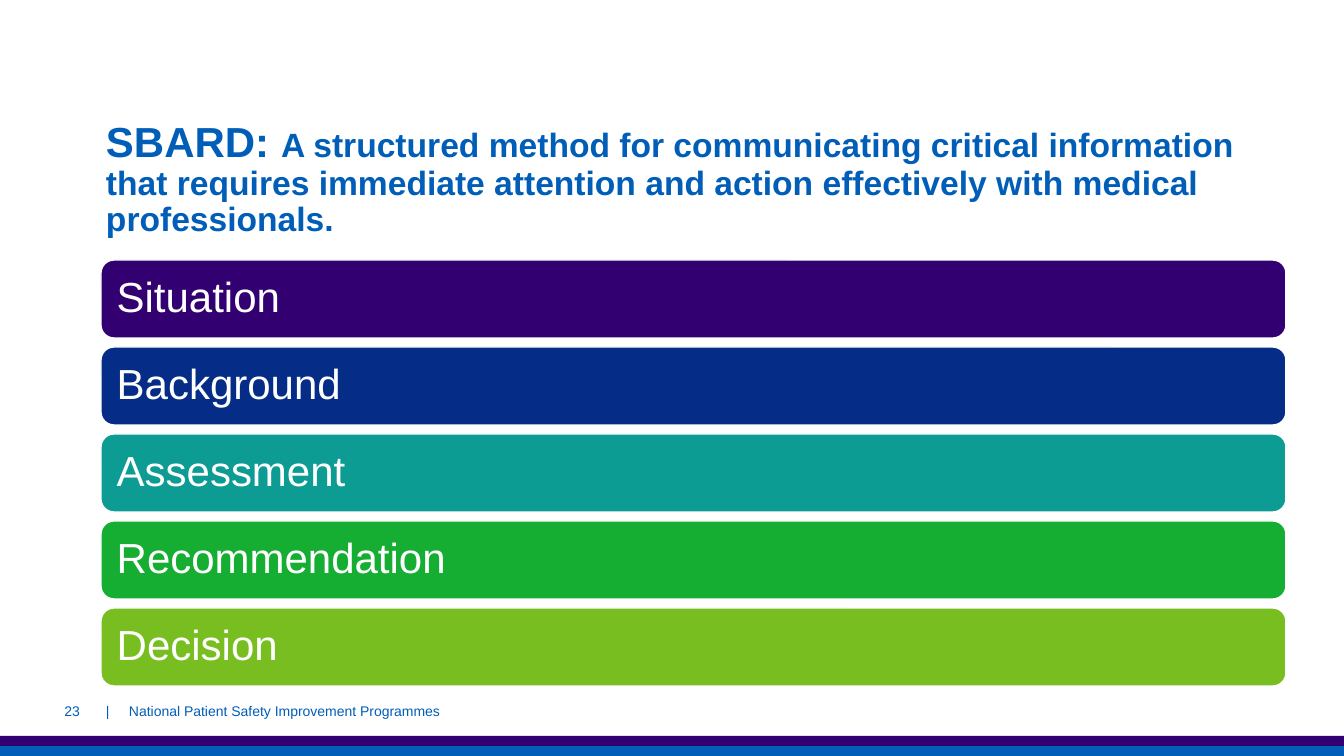
from lxml import etree
from pptx import Presentation
from pptx.dml.color import RGBColor
from pptx.enum.shapes import MSO_SHAPE as SHAPE
from pptx.enum.text import MSO_ANCHOR as ANCHOR, MSO_AUTO_SIZE as AUTO, PP_ALIGN as ALIGN
from pptx.oxml.ns import qn
from pptx.util import Pt

PX = 12192000 / 1344
WIDTH, HEIGHT = 1344, 756
FONT = "Arial"
BLUE = RGBColor(0x00, 0x5E, 0xB8)
PURPLE = RGBColor(0x33, 0x00, 0x72)
NAVY = RGBColor(0x05, 0x2D, 0x88)
TEAL = RGBColor(0x0C, 0x9C, 0x94)
GREEN = RGBColor(0x15, 0xAE, 0x33)
LIME = RGBColor(0x78, 0xBE, 0x20)
WHITE = RGBColor(0xFF, 0xFF, 0xFF)

STEPS = [
    ("Situation", PURPLE),
    ("Background", NAVY),
    ("Assessment", TEAL),
    ("Recommendation", GREEN),
    ("Decision", LIME),
]


def px(n):
    """Turn pixels into EMU."""
    return round(n * PX)


def set_frame(tf, anchor, side, edge):
    """Set wrapping, anchor and the side and top/bottom insets of a text frame."""
    tf.word_wrap = True
    tf.auto_size = AUTO.NONE
    tf.vertical_anchor = anchor
    tf.margin_left = tf.margin_right = px(side)
    tf.margin_top = tf.margin_bottom = px(edge)


def add_run(p, text, size, color, bold=False):
    """Add one formatted run to a paragraph."""
    r = p.add_run()
    r.text = text
    r.font.name = FONT
    r.font.size = Pt(size)
    r.font.bold = bold
    r.font.color.rgb = color


def add_block(slide, kind, box, fill):
    """Add a flat filled shape without an outline."""
    sp = slide.shapes.add_shape(kind, *map(px, box))
    sp.shadow.inherit = False
    sp.fill.solid()
    sp.fill.fore_color.rgb = fill
    sp.line.fill.background()
    return sp


def add_title(slide, box):
    """Place the heading and its definition in the title placeholder."""
    sp = slide.shapes.title
    sp.left, sp.top, sp.width, sp.height = map(px, box)
    set_frame(sp.text_frame, ANCHOR.TOP, 0, 0)
    p = sp.text_frame.paragraphs[0]
    p.alignment = ALIGN.LEFT
    p.line_spacing = 0.9
    add_run(p, "SBARD: ", 30, BLUE, True)
    add_run(p, "A structured method for communicating critical information that "
               "requires immediate attention and action effectively with medical "
               "professionals.", 24, BLUE, True)


def add_steps(slide, box, gap):
    """Stack one rounded bar per step, equally spaced in the box."""
    left, top, width, height = box
    bar = (height - gap * (len(STEPS) - 1)) / len(STEPS)
    for i, (name, color) in enumerate(STEPS):
        sp = add_block(slide, SHAPE.ROUNDED_RECTANGLE,
                       (left, top + i * (bar + gap), width, bar), color)
        sp.line.color.rgb = WHITE
        sp.line.width = Pt(1)
        set_frame(sp.text_frame, ANCHOR.MIDDLE, 12, 12)
        p = sp.text_frame.paragraphs[0]
        p.alignment = ALIGN.LEFT
        p.line_spacing = 0.9
        add_run(p, name, 30, WHITE)


def add_footer(slide, box):
    """Place the page number, the programme name and the two bottom stripes."""
    left, top, width, height = box
    number = slide.shapes.add_textbox(*map(px, (left + 13, top, 77, 40)))
    set_frame(number.text_frame, ANCHOR.MIDDLE, 10, 5)
    p = number.text_frame.paragraphs[0]
    p.alignment = ALIGN.RIGHT
    add_run(p, "23", 10, BLUE)

    name = slide.shapes.add_textbox(*map(px, (left + 106, top, 454, 40)))
    set_frame(name.text_frame, ANCHOR.MIDDLE, 0, 5)
    p = name.text_frame.paragraphs[0]
    tabs = etree.SubElement(p._p.get_or_add_pPr(), qn("a:tabLst"))
    etree.SubElement(tabs, qn("a:tab"), pos=str(px(23)), algn="l")
    add_run(p, "|\tNational Patient Safety Improvement Programmes", 10, BLUE)

    for i, color in enumerate((BLUE, PURPLE), 1):
        add_block(slide, SHAPE.RECTANGLE,
                  (left, top + height - 10 * i, width, 10), color)


def main():
    """Build the slide and save it."""
    prs = Presentation()
    prs.slide_width, prs.slide_height = px(WIDTH), px(HEIGHT)
    slide = prs.slides.add_slide(prs.slide_layouts[5])
    add_title(slide, (106, 121, 1185, 135))
    add_steps(slide, (101, 260, 1185, 426), 9)
    add_footer(slide, (0, 691, WIDTH, 65))
    prs.save("out.pptx")


if __name__ == "__main__":
    main()
